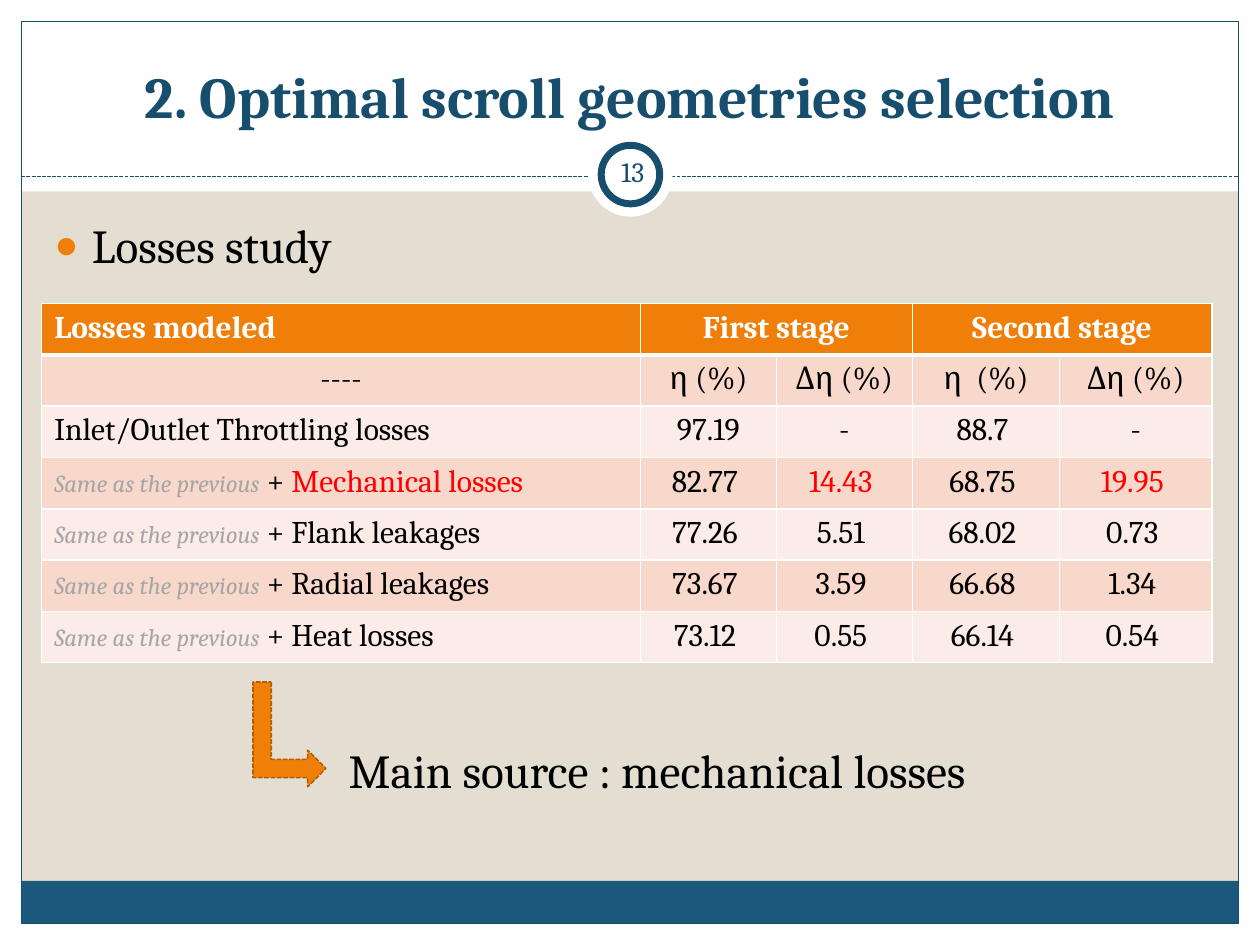
from lxml import etree
from pptx import Presentation
from pptx.dml.color import RGBColor
from pptx.enum.dml import MSO_LINE
from pptx.enum.shapes import MSO_CONNECTOR, MSO_SHAPE
from pptx.enum.text import MSO_ANCHOR, MSO_AUTO_SIZE, PP_ALIGN
from pptx.oxml.ns import qn
from pptx.util import Cm, Pt

RECT, OVAL = MSO_SHAPE.RECTANGLE, MSO_SHAPE.OVAL
BENT = MSO_SHAPE.BENT_UP_ARROW
LINE = MSO_CONNECTOR.STRAIGHT
DASH = MSO_LINE.SQUARE_DOT
LEFT, MID = PP_ALIGN.LEFT, PP_ALIGN.CENTER
TOP, CORE, LOW = MSO_ANCHOR.TOP, MSO_ANCHOR.MIDDLE, MSO_ANCHOR.BOTTOM
FIXED = MSO_AUTO_SIZE.NONE

FONT = "Cambria"
WHITE, BLACK, RED, GREY = "FFFFFF", "000000", "FF0000", "A6A6A6"
NAVY, BLUE, SAND = "184E6D", "1B587C", "E3DED1"
AMBER, RUST, PINK, PALE = "F07F09", "B25E07", "F9D8CC", "FCECE7"
WIDE, HIGH, EDGE = 25.4, 19.05, 0.43

SAME = ("Same as the previous", 14, GREY, False, True)
ROWS = [
    ([("Inlet/Outlet Throttling losses",)], "97.19", "-", "88.7 ", "-"),
    ([SAME, (" + ",), ("Mechanical losses", 18, RED)],
     "82.77 ", "14.43 ", "68.75 ", "19.95 "),
    ([SAME, (" + Flank leakages",)], "77.26 ", "5.51 ", "68.02 ", "0.73 "),
    ([SAME, (" + Radial leakages",)], "73.67 ", "3.59 ", "66.68 ", "1.34 "),
    ([SAME, (" + Heat losses",)], "73.12 ", "0.55 ", "66.14 ", "0.54 "),
]
HOT = {"14.43 ", "19.95 "}


def tint(code):
    return RGBColor.from_string(code)


def add_run(para, text, size=18, color=BLACK, bold=False, ital=False):
    run = para.add_run()
    run.text = text
    font = run.font
    font.name, font.size = FONT, Pt(size)
    font.bold, font.italic = bold, ital
    font.color.rgb = tint(color)


def paint(shape, fill=None, line=None, width=0.75):
    shape.shadow.inherit = False
    if fill:
        shape.fill.solid()
        shape.fill.fore_color.rgb = tint(fill)
    else:
        shape.fill.background()
    if line:
        shape.line.color.rgb = tint(line)
        shape.line.width = Pt(width)
    else:
        shape.line.fill.background()


def add_form(slide, kind, box, **look):
    shape = slide.shapes.add_shape(kind, *map(Cm, box))
    paint(shape, **look)
    return shape


def add_text(slide, box, text, size, color, align=LEFT, anchor=TOP):
    frame = slide.shapes.add_textbox(*map(Cm, box)).text_frame
    frame.word_wrap = True
    frame.vertical_anchor = anchor
    para = frame.paragraphs[0]
    para.alignment = align
    add_run(para, text, size, color)
    return frame


def place(holder, box, anchor):
    """Move a placeholder to its box and in front of the backdrop."""
    holder.left, holder.top, holder.width, holder.height = map(Cm, box)
    holder.element.getparent().append(holder.element)
    frame = holder.text_frame
    frame.auto_size, frame.vertical_anchor = FIXED, anchor
    return frame.paragraphs[0]


def add_page(slide):
    # White margins, footer band and outline
    head, foot = 3.86, 0.86
    inner = WIDE - 2 * EDGE
    for box in [(0, HIGH - EDGE, WIDE, EDGE), (0, 0, WIDE, head),
                (0, 0, EDGE, HIGH), (WIDE - EDGE, 0, EDGE, HIGH)]:
        add_form(slide, RECT, box, fill=WHITE)
    add_form(slide, RECT, (EDGE, HIGH - EDGE - foot, inner, foot), fill=BLUE)
    add_form(slide, RECT, (EDGE, EDGE, inner, HIGH - 2 * EDGE), line=NAVY)

    # Dashed rule under the title
    rule = slide.shapes.add_connector(
        LINE, Cm(EDGE), Cm(3.56), Cm(WIDE - EDGE), Cm(3.56))
    rule.line.color.rgb = tint(NAVY)
    rule.line.width, rule.line.dash_style = Pt(0.75), DASH
    etree.SubElement(rule.element.spPr, qn("a:effectLst"))


def add_badge(slide, box, number):
    # Ring centred in its white disc, with the slide number
    left, top, size = box
    gap = 0.26
    add_form(slide, OVAL, (left, top, size, size), fill=WHITE)
    ring = size - 2 * gap
    add_form(slide, OVAL, (left + gap, top + gap, ring, ring),
             fill=WHITE, line=NAVY, width=4)
    frame = add_text(slide, (left + gap, top + 0.17, 1.27, 1.22),
                     number, 16, NAVY, MID, CORE)
    frame.margin_left = frame.margin_right = Cm(0.13)


def add_title(slide, box, text):
    para = place(slide.shapes.title, box, LOW)
    para.alignment = MID
    add_run(para, text, 33, NAVY, True)


def add_list(slide, box, text):
    para = place(slide.placeholders[1], box, TOP)
    add_run(para, text, 27)
    props = para._p.get_or_add_pPr()
    props.set("marL", str(Cm(0.76)))
    props.set("indent", str(Cm(-0.76)))
    space = etree.SubElement(props, qn("a:spcBef"))
    etree.SubElement(space, qn("a:spcPct"), val="20000")
    color = etree.SubElement(props, qn("a:buClr"))
    etree.SubElement(color, qn("a:srgbClr"), val=AMBER)
    etree.SubElement(props, qn("a:buSzPct"), val="85000")
    etree.SubElement(props, qn("a:buChar"), char="●")


def edge_cell(cell, **widths):
    props = cell._tc.get_or_add_tcPr()
    for spot, side in enumerate("LRTB"):
        line = etree.Element(qn("a:ln" + side),
                             w=str(Pt(widths.get(side, 1))))
        fill = etree.SubElement(line, qn("a:solidFill"))
        etree.SubElement(fill, qn("a:srgbClr"), val=WHITE)
        props.insert(spot, line)


def fill_cell(cell, runs, fill, align, **widths):
    cell.fill.solid()
    cell.fill.fore_color.rgb = tint(fill)
    edge_cell(cell, **widths)
    para = cell.text_frame.paragraphs[0]
    para.alignment = align
    for run in runs:
        add_run(para, *run)


def add_losses(slide, box):
    grid = slide.shapes.add_table(len(ROWS) + 2, 5, *map(Cm, box)).table
    for col, width in zip(grid.columns, (12.07, 2.74, 2.74, 2.97, 3.07)):
        col.width = Cm(width)
    for row in grid.rows:
        row.height = Cm(box[3] / len(grid.rows))

    # Header, each stage over two columns
    heads = ["Losses modeled", "First stage", "", "Second stage", ""]
    for col, text in enumerate(heads):
        runs = [(text, 18, WHITE, True)] if text else []
        fill_cell(grid.cell(0, col), runs, AMBER, MID if col else LEFT, B=3)
    for col in (1, 3):
        grid.cell(0, col).merge(grid.cell(0, col + 1))

    # Units
    units = ["----", "η (%)", "Δη (%)", "η  (%)", "Δη (%)"]
    for col, text in enumerate(units):
        fill_cell(grid.cell(1, col), [(text,)], PINK, MID, T=3)

    # Banded values
    for row, (label, *values) in enumerate(ROWS, 2):
        fill = PALE if row % 2 == 0 else PINK
        fill_cell(grid.cell(row, 0), label, fill, LEFT)
        for col, text in enumerate(values, 1):
            color = RED if text in HOT else BLACK
            fill_cell(grid.cell(row, col), [(text, 18, color)], fill, MID)


def add_result(slide, box, text):
    # Arrow turned towards the conclusion
    left, top, width, high = box
    arrow = add_form(slide, BENT, (left, top, 2.11, 1.47),
                     fill=AMBER, line=RUST, width=0.9)
    arrow.rotation = 90
    arrow.line.dash_style = DASH
    add_text(slide, (left + 2, top + 0.74, width - 2, high - 0.74),
             text, 27, BLACK)


def main():
    deck = Presentation()
    deck.slide_width, deck.slide_height = Cm(WIDE), Cm(HIGH)
    slide = deck.slides.add_slide(deck.slide_layouts[1])
    slide.background.fill.solid()
    slide.background.fill.fore_color.rgb = tint(SAND)
    add_page(slide)
    add_title(slide, (0.84, 0.64, 23.7, 2.11),
              "2. Optimal scroll geometries selection")
    add_list(slide, (0.84, 4.24, 23.62, 12.7), "Losses study")
    add_badge(slide, (11.86, 2.67, 1.7), "13")
    add_losses(slide, (0.84, 6.12, 23.59, 7.24))
    add_result(slide, (4.78, 14.07, 19.58, 2.19),
               "Main source : mechanical losses")
    deck.save("out.pptx")


if __name__ == "__main__":
    main()
